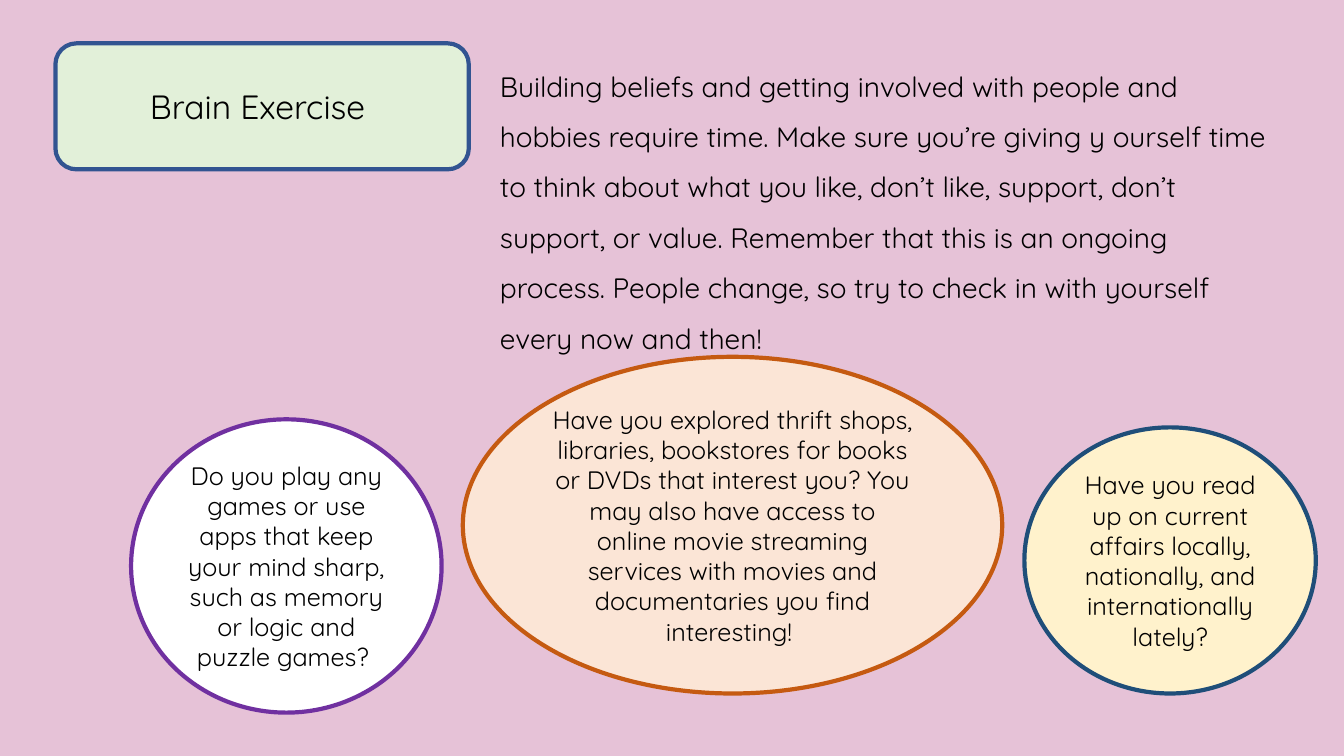
from pptx import Presentation
from pptx.dml.color import RGBColor
from pptx.enum.shapes import MSO_SHAPE as SHAPE
from pptx.enum.text import MSO_ANCHOR as ANCHOR, MSO_AUTO_SIZE as AUTO, PP_ALIGN as ALIGN
from pptx.util import Inches, Pt

# Content
TITLE = "Brain Exercise "
INTRO = (
    "Building beliefs and getting involved with people and hobbies require time. "
    "Make sure you’re giving y ourself time to think about what you like, don’t like, "
    "support, don’t support, or value. Remember that this is an ongoing process. "
    "People change, so try to check in with yourself every now and then!"
)
GAMES = (
    "Do you play any games or use apps that keep your mind sharp, "
    "such as memory or logic and puzzle games? "
)
NEWS = (
    "Have you read up on current affairs locally, nationally, "
    "and internationally lately?"
)
MEDIA = (
    "Have you explored thrift shops, libraries, bookstores for books or DVDs that "
    "interest you? You may also have access to online movie streaming services with "
    "movies and documentaries you find interesting! "
)

FONT = "Quicksand"
COLORS = {
    "background": "E6C2D7", "text": "000000",
    "green": "E2F0D9", "blue": "325491",
    "white": "FFFFFF", "purple": "7030A0",
    "cream": "FFF2CC", "navy": "1F4E79",
    "peach": "FBE5D6", "orange": "C55A11",
}

# Boxes: left, top, width, height in inches
TITLE_BOX = (0.55, 0.43, 4.1, 1.25)
INTRO_BOX = (4.86, 0.47, 7.92, 3.07)
QUESTIONS = [
    (GAMES, (1.3, 4.16, 3.08, 2.91), "white", "purple"),
    (NEWS, (10.16, 4.24, 2.89, 2.64), "cream", "navy"),
    (MEDIA, (4.59, 3.54, 5.35, 3.34), "peach", "orange"),
]


def color(name):
    return RGBColor.from_string(COLORS[name])


def inches(box):
    return [Inches(v) for v in box]


def add_outlined(slide, kind, box, fill, line):
    s = slide.shapes.add_shape(kind, *inches(box))
    s.shadow.inherit = False
    s.fill.solid()
    s.fill.fore_color.rgb = color(fill)
    s.line.color.rgb = color(line)
    s.line.width = Pt(3)
    return s


def write(s, text, size, align=ALIGN.CENTER, anchor=ANCHOR.MIDDLE, spacing=1.0):
    tf = s.text_frame
    tf.text = text
    tf.word_wrap = True
    tf.auto_size = AUTO.NONE
    tf.vertical_anchor = anchor
    p = tf.paragraphs[0]
    p.alignment = align
    p.line_spacing = spacing
    font = p.runs[0].font
    font.name = FONT
    font.size = Pt(size)
    font.color.rgb = color("text")


prs = Presentation()
prs.slide_width, prs.slide_height = Inches(13.33), Inches(7.5)
slide = prs.slides.add_slide(prs.slide_layouts.get_by_name("Title Only"))
slide.background.fill.solid()
slide.background.fill.fore_color.rgb = color("background")

# Title on its rounded panel, with the panel behind it
title = slide.shapes.title
panel = add_outlined(slide, SHAPE.ROUNDED_RECTANGLE, TITLE_BOX, "green", "blue")
title.element.addprevious(panel.element)
title.left, title.top, title.width, title.height = inches(TITLE_BOX)
write(title, TITLE, 24)

# Introduction
intro = slide.shapes.add_textbox(*inches(INTRO_BOX))
write(intro, INTRO, 20, ALIGN.LEFT, ANCHOR.TOP, 1.5)

# Question ellipses
for text, box, fill, line in QUESTIONS:
    write(add_outlined(slide, SHAPE.OVAL, box, fill, line), text, 18)

prs.save("out.pptx")
